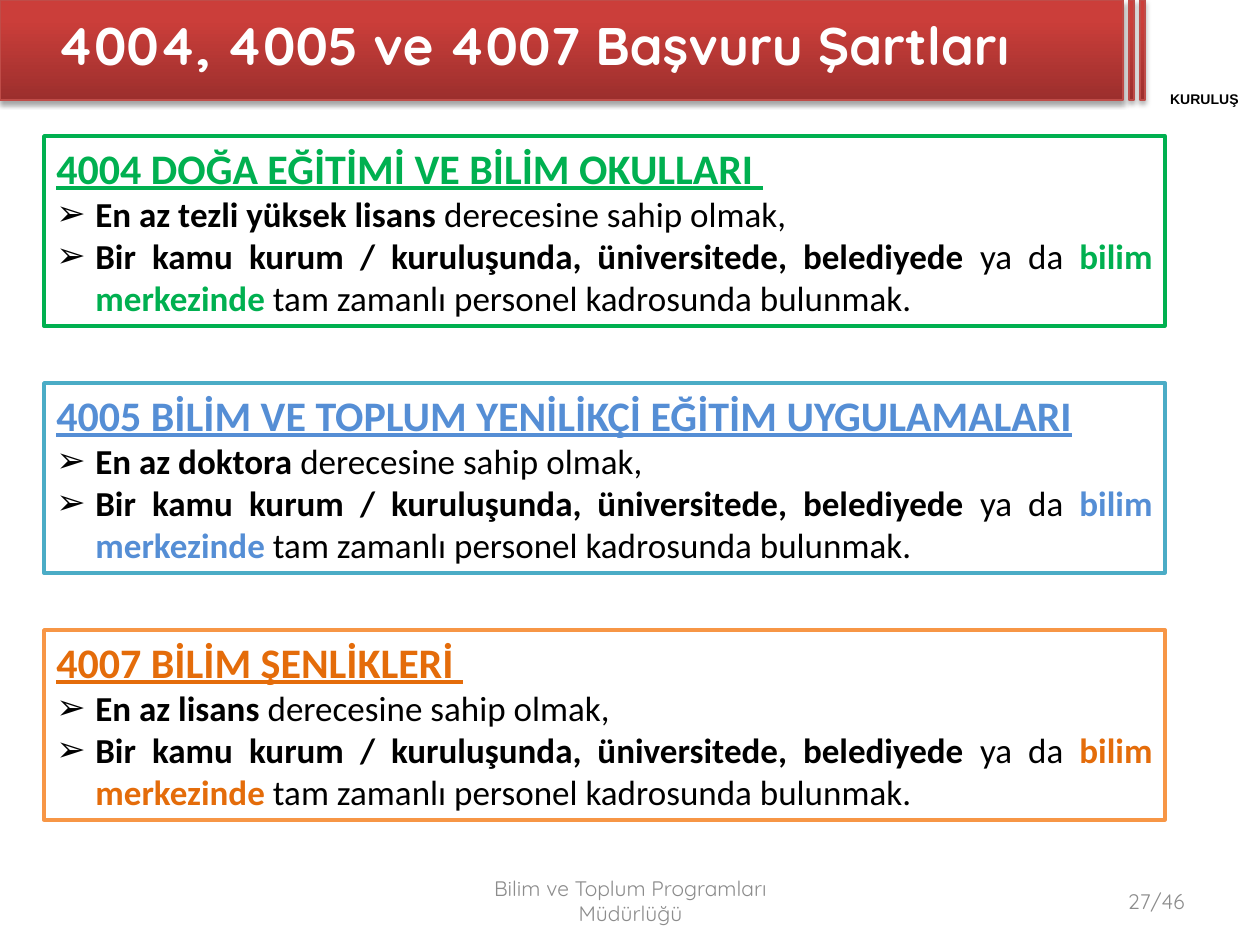
from dataclasses import dataclass

from lxml import etree
from pptx import Presentation
from pptx.dml.color import RGBColor
from pptx.enum.shapes import MSO_SHAPE
from pptx.enum.text import MSO_ANCHOR, MSO_AUTO_SIZE, PP_ALIGN
from pptx.oxml.ns import qn
from pptx.util import Emu, Pt

RECTANGLE = MSO_SHAPE.RECTANGLE
TOP, MIDDLE = MSO_ANCHOR.TOP, MSO_ANCHOR.MIDDLE
LEFT, CENTER, RIGHT, JUSTIFY = PP_ALIGN.LEFT, PP_ALIGN.CENTER, PP_ALIGN.RIGHT, PP_ALIGN.JUSTIFY
NO_AUTOFIT = MSO_AUTO_SIZE.NONE
TITLE_ONLY = 5


@dataclass(frozen=True)
class Theme:
    display: str = "Quicksand"
    body: str = "Calibri"
    caption: str = "Arial"
    black: str = "000000"
    white: str = "FFFFFF"
    gray: str = "8C8C8C"
    band_dark: str = "9C2F2D"
    band_light: str = "CB3E3A"
    band_line: str = "BF4C48"
    title_size: float = 30.2
    heading_size: int = 24
    item_size: int = 20
    footer_size: int = 12
    caption_size: int = 8


THEME = Theme()

PANELS = [
    ("4004 DOĞA EĞİTİMİ VE BİLİM OKULLARI ", "En az tezli yüksek lisans", "00B050", "00B050"),
    ("4005 BİLİM VE TOPLUM YENİLİKÇİ EĞİTİM UYGULAMALARI", "En az doktora", "558ED5", "4BACC6"),
    ("4007 BİLİM ŞENLİKLERİ ", "En az lisans", "E46C0A", "F79646"),
]


def px(length):
    return Emu(round(length * 914400 / 126))


def rgb(value):
    return RGBColor.from_string(value)


def place(shape, box):
    shape.left, shape.top, shape.width, shape.height = map(px, box)


def style(font, name, size, color, bold=False):
    font.name, font.size, font.bold = name, Pt(size), bold
    font.color.rgb = rgb(color)


def add_bar(page, box):
    bar = page.shapes.add_shape(RECTANGLE, *map(px, box))
    bar.fill.gradient()
    bar.fill.gradient_angle = 90
    stops = zip(bar.fill.gradient_stops, (0, 0.8), (THEME.band_dark, THEME.band_light))
    for stop, position, color in stops:
        stop.position = position
        stop.color.rgb = rgb(color)
    bar.line.color.rgb = rgb(THEME.band_line)
    bar.line.width = Pt(0.75)
    bar.shadow.inherit = False
    effects = bar._element.spPr.find(qn("a:effectLst"))
    shadow = etree.SubElement(effects, qn("a:outerShdw"), blurRad=str(Pt(3.1)),
                              dist=str(Pt(1.8)), dir="5400000", rotWithShape="0")
    color = etree.SubElement(shadow, qn("a:srgbClr"), val=THEME.black)
    etree.SubElement(color, qn("a:alpha"), val="35000")


def add_header(page, box):
    left, top, width, height = box
    add_bar(page, (left, top, width - 22, height))
    for offset in (16, 5):
        add_bar(page, (left + width - offset, top, 5, height))
    title = page.shapes.title
    place(title, (left + 44, top - 4, 1071, 97))
    frame = title.text_frame
    frame.text = "4004, 4005 ve 4007 Başvuru Şartları"
    frame.auto_size = NO_AUTOFIT
    frame.vertical_anchor = MIDDLE
    para = frame.paragraphs[0]
    para.alignment = LEFT
    style(para.font, THEME.display, THEME.title_size, THEME.white, True)
    page.shapes._spTree.append(title._element)


def add_label(page, box, text, alignment, font, size, color, bold=False, inset=True):
    frame = page.shapes.add_textbox(*map(px, box)).text_frame
    frame.word_wrap = True
    frame.vertical_anchor = MIDDLE
    if not inset:
        frame.margin_left = frame.margin_right = frame.margin_top = frame.margin_bottom = 0
    para = frame.paragraphs[0]
    para.text = text
    para.alignment = alignment
    style(para.font, font, size, color, bold)


def add_item(frame, alignment, spans):
    para = frame.add_paragraph()
    para.alignment = alignment
    properties = para._p.get_or_add_pPr()
    properties.set("marL", str(px(39)))
    properties.set("indent", str(-px(39)))
    etree.SubElement(properties, qn("a:buFont"), typeface=THEME.caption)
    etree.SubElement(properties, qn("a:buChar"), char="➢")
    style(para.font, THEME.body, THEME.item_size, THEME.black)
    for text, bold, color in spans:
        span = para.add_run()
        span.text = text
        style(span.font, THEME.body, THEME.item_size, color, bold)


def add_panel(page, box, heading, degree, accent, border):
    panel = page.shapes.add_shape(RECTANGLE, *map(px, box))
    panel.shadow.inherit = False
    panel.fill.solid()
    panel.fill.fore_color.rgb = rgb(THEME.white)
    panel.line.color.rgb = rgb(border)
    panel.line.width = Pt(2)
    frame = panel.text_frame
    frame.word_wrap = True
    frame.vertical_anchor = TOP
    para = frame.paragraphs[0]
    para.text = heading
    para.alignment = LEFT
    style(para.font, THEME.body, THEME.heading_size, accent, True)
    para.font.underline = True
    add_item(frame, LEFT, [
        (degree, True, THEME.black),
        (" derecesine sahip olmak,", False, THEME.black),
    ])
    add_item(frame, JUSTIFY, [
        ("Bir kamu kurum / kuruluşunda, üniversitede, belediyede ", True, THEME.black),
        ("ya da ", False, THEME.black),
        ("bilim merkezinde ", True, accent),
        ("tam zamanlı personel kadrosunda bulunmak.", False, THEME.black),
    ])


def add_footer(page, box):
    left, top, width, height = box
    look = (THEME.display, THEME.footer_size, THEME.gray)
    add_label(page, (left, top, 399, height), "Bilim ve Toplum Programları Müdürlüğü", CENTER, *look)
    add_label(page, (left + width - 294, top, 294, height), "27/46", RIGHT, *look)


def main():
    deck = Presentation()
    deck.slide_width, deck.slide_height = px(1260), px(945)
    page = deck.slides.add_slide(deck.slide_layouts[TITLE_ONLY])
    add_header(page, (0, 0, 1145, 100))
    add_label(page, (1149, 91, 111, 16), "KURULUŞ", CENTER, THEME.caption,
              THEME.caption_size, THEME.black, True, inset=False)
    for index, panel in enumerate(PANELS):
        add_panel(page, (44, 136 + 247 * index, 1121, 190), *panel)
    add_footer(page, (431, 876, 766, 50))
    deck.save("out.pptx")


if __name__ == "__main__":
    main()
